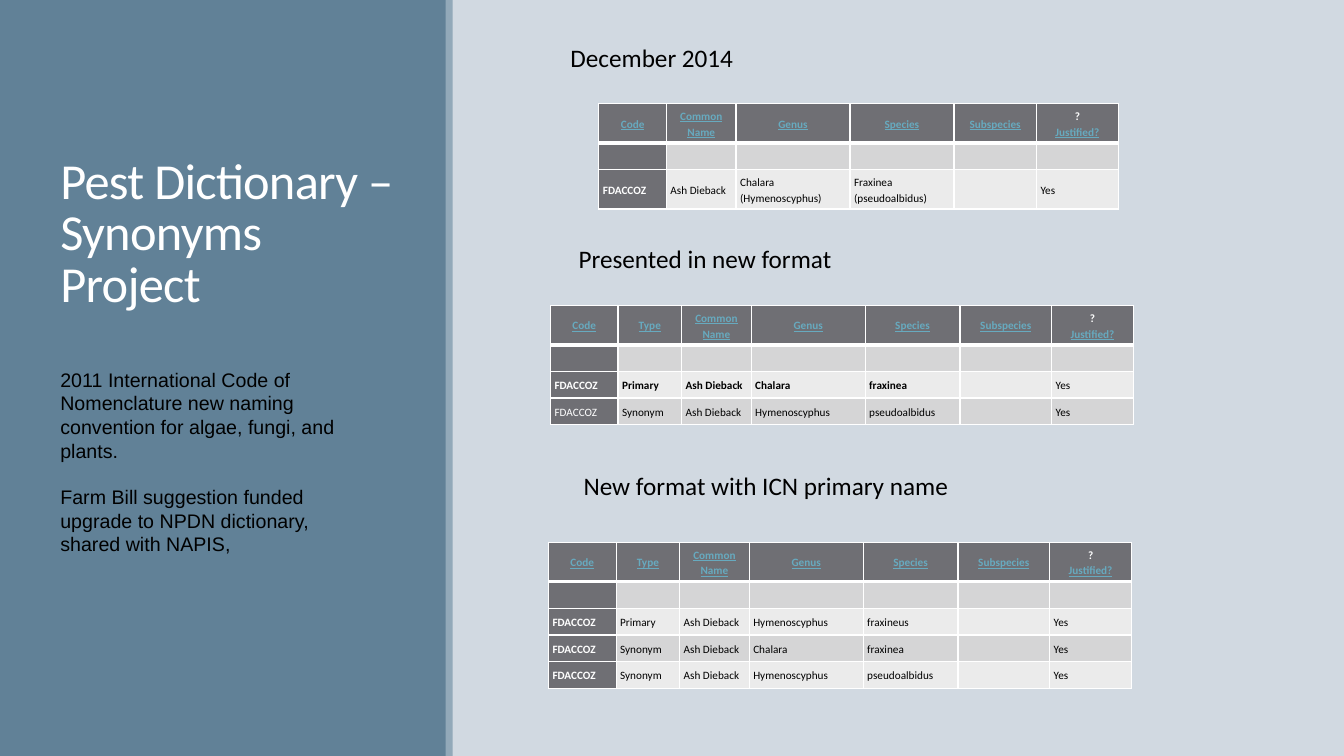
import pptx
import pptx.dml.color
import pptx.enum.shapes
import pptx.enum.text
import pptx.util
from lxml import etree
from pptx.oxml.ns import qn

COLORS = {
    "background": "D1D9E1", "panel": "618197", "divider": "92A9B9",
    "white": "FFFFFF", "black": "000000", "heading": "67AABF",
    "dark": "6F6F74", "band": "D5D5D6", "light": "EBEBEB",
}
ANCHOR = pptx.enum.text.MSO_ANCHOR
CENTER = pptx.enum.text.PP_ALIGN.CENTER


def rgb(name):
    return pptx.dml.color.RGBColor.from_string(COLORS[name])


class SlideBuilder:
    """Places elements by left, top, width, height in percent of the slide."""

    header_height = 5.2
    row_height = 3.53
    cell_margin = pptx.util.Inches(0.04)

    def __init__(self, deck):
        self.deck = deck
        self.slide = deck.slides.add_slide(deck.slide_layouts[6])
        self.slide.background.fill.solid()
        self.slide.background.fill.fore_color.rgb = rgb("background")

    def x(self, share):
        return round(self.deck.slide_width * share / 100)

    def y(self, share):
        return round(self.deck.slide_height * share / 100)

    def box(self, left, top, width, height):
        return self.x(left), self.y(top), self.x(width), self.y(height)

    def style(self, paragraph, size, color, font="Calibri", bold=False):
        paragraph.font.size = pptx.util.Pt(size)
        paragraph.font.name = font
        paragraph.font.bold = bold
        paragraph.font.color.rgb = rgb(color)

    def panel(self, area, color):
        panel = self.slide.shapes.add_shape(
            pptx.enum.shapes.MSO_SHAPE.RECTANGLE, *self.box(*area))
        panel.shadow.inherit = False
        panel.fill.solid()
        panel.fill.fore_color.rgb = rgb(color)
        panel.line.fill.background()

    def text(self, area, paragraphs, size, color="black", font="Calibri",
             anchor=ANCHOR.TOP, gap=0, line_spacing=None, tracking=0):
        """Tracking is in hundredths of a point."""
        frame = self.slide.shapes.add_textbox(*self.box(*area)).text_frame
        frame.word_wrap = True
        frame.vertical_anchor = anchor
        for index, words in enumerate(paragraphs):
            paragraph = frame.add_paragraph() if index else frame.paragraphs[0]
            paragraph.text = words
            self.style(paragraph, size, color, font)
            if index:
                paragraph.space_before = pptx.util.Pt(gap)
            if line_spacing:
                paragraph.line_spacing = line_spacing
            if tracking:
                for run in paragraph.runs:
                    run._r.get_or_add_rPr().set("spc", str(tracking))

    def borders(self, cell, top, bottom):
        properties = cell._tc.get_or_add_tcPr()
        for side, points in (("L", 1), ("R", 1), ("T", top), ("B", bottom)):
            line = etree.SubElement(properties, qn(f"a:ln{side}"),
                                    w=str(pptx.util.Pt(points)))
            fill = etree.SubElement(line, qn("a:solidFill"))
            etree.SubElement(fill, qn("a:srgbClr"), val=COLORS["white"])

    def cell(self, cell, words, fill, color, bold, top=1, bottom=1):
        self.borders(cell, top, bottom)
        cell.fill.solid()
        cell.fill.fore_color.rgb = rgb(fill)
        cell.vertical_anchor = ANCHOR.MIDDLE
        cell.margin_left = cell.margin_right = self.cell_margin
        cell.margin_top = cell.margin_bottom = self.cell_margin
        paragraph = cell.text_frame.paragraphs[0]
        paragraph.line_spacing = 1.15
        self.style(paragraph, 8, color, bold=bold)
        if words:
            paragraph.text = words
        else:
            etree.SubElement(paragraph._p, qn("a:endParaRPr"), sz="800")
        return paragraph

    def table(self, left, top, columns, records, tall=()):
        """Columns map headings to widths; each record is (bold cells, texts)."""
        rows = [(0, [""] * len(columns)), *records]
        heights = [self.header_height] + [
            self.header_height if number in tall else self.row_height
            for number in range(len(rows))]
        area = self.box(left, top, sum(columns.values()), sum(heights))
        table = self.slide.shapes.add_table(
            len(heights), len(columns), *area).table
        table.first_row = table.horz_banding = False
        for row, height in zip(table.rows, heights):
            row.height = self.y(height)
        for index, (heading, width) in enumerate(columns.items()):
            table.columns[index].width = self.x(width)
            title = self.cell(table.cell(0, index), heading, "dark",
                              "heading", True, bottom=3)
            title.alignment = CENTER
            title.font.underline = True
            if heading.startswith("?"):
                title.runs[0].font.underline = False
                title.runs[0].font.color.rgb = rgb("white")
        for number, (bold_cells, texts) in enumerate(rows):
            band = "light" if number % 2 else "band"
            for index, words in enumerate(texts):
                fill, color = (band, "black") if index else ("dark", "white")
                self.cell(table.cell(number + 1, index), words, fill, color,
                          index < bold_cells, top=1 if number else 3)


def main():
    deck = pptx.Presentation()
    deck.slide_width = pptx.util.Inches(13.33)
    deck.slide_height = pptx.util.Inches(7.5)
    page = SlideBuilder(deck)

    page.panel((0, 0, 33.23, 100), "panel")
    page.panel((33.16, 0, 0.53, 100), "divider")
    page.text((3.75, 8.67, 26.26, 33.33), ["Pest Dictionary –Synonyms Project"],
              36, "white", anchor=ANCHOR.BOTTOM, line_spacing=0.85, tracking=-50)
    page.text((3.75, 48, 24.61, 30.53), [
        "2011 International Code of Nomenclature new naming convention "
        "for algae, fungi, and plants.",
        "Farm Bill suggestion funded upgrade to NPDN dictionary, "
        "shared with NAPIS,",
    ], 14, font="Arial", gap=16.5)

    page.text((41.71, 4.93, 14.1, 5.33), ["December 2014"], 18)
    page.text((42.31, 31.47, 27.46, 5.33), ["Presented in new format"], 18)
    page.text((42.68, 61.6, 30.16, 5.33), ["New format with ICN primary name"], 18)

    old_columns = {"Code": 5.03, "Common Name": 5.18, "Genus": 8.48,
                   "Species": 7.73, "Subspecies": 6.15, "?\vJustified?": 6.08}
    new_columns = {"Code": 5.03, "Type": 4.73, "Common Name": 5.18,
                   "Genus": 8.48, "Species": 7.05, "Subspecies": 6.83,
                   "?\vJustified?": 6.08}

    def ash_dieback(bold_cells, kind, genus, species):
        return bold_cells, ["FDACCOZ", kind, "Ash Dieback", genus, species,
                            "", "Yes"]

    page.table(44.56, 13.73, old_columns, [
        (1, ["FDACCOZ", "Ash Dieback", "Chalara (Hymenoscyphus)",
             "Fraxinea (pseudoalbidus)", "", "Yes"]),
    ], tall=(1,))
    page.table(40.96, 40.4, new_columns, [
        ash_dieback(6, "Primary", "Chalara", "fraxinea"),
        ash_dieback(0, "Synonym", "Hymenoscyphus", "pseudoalbidus"),
    ])
    page.table(40.81, 71.73, new_columns, [
        ash_dieback(1, "Primary", "Hymenoscyphus", "fraxineus"),
        ash_dieback(1, "Synonym", "Chalara", "fraxinea"),
        ash_dieback(1, "Synonym", "Hymenoscyphus", "pseudoalbidus"),
    ])
    deck.save("out.pptx")


if __name__ == "__main__":
    main()
